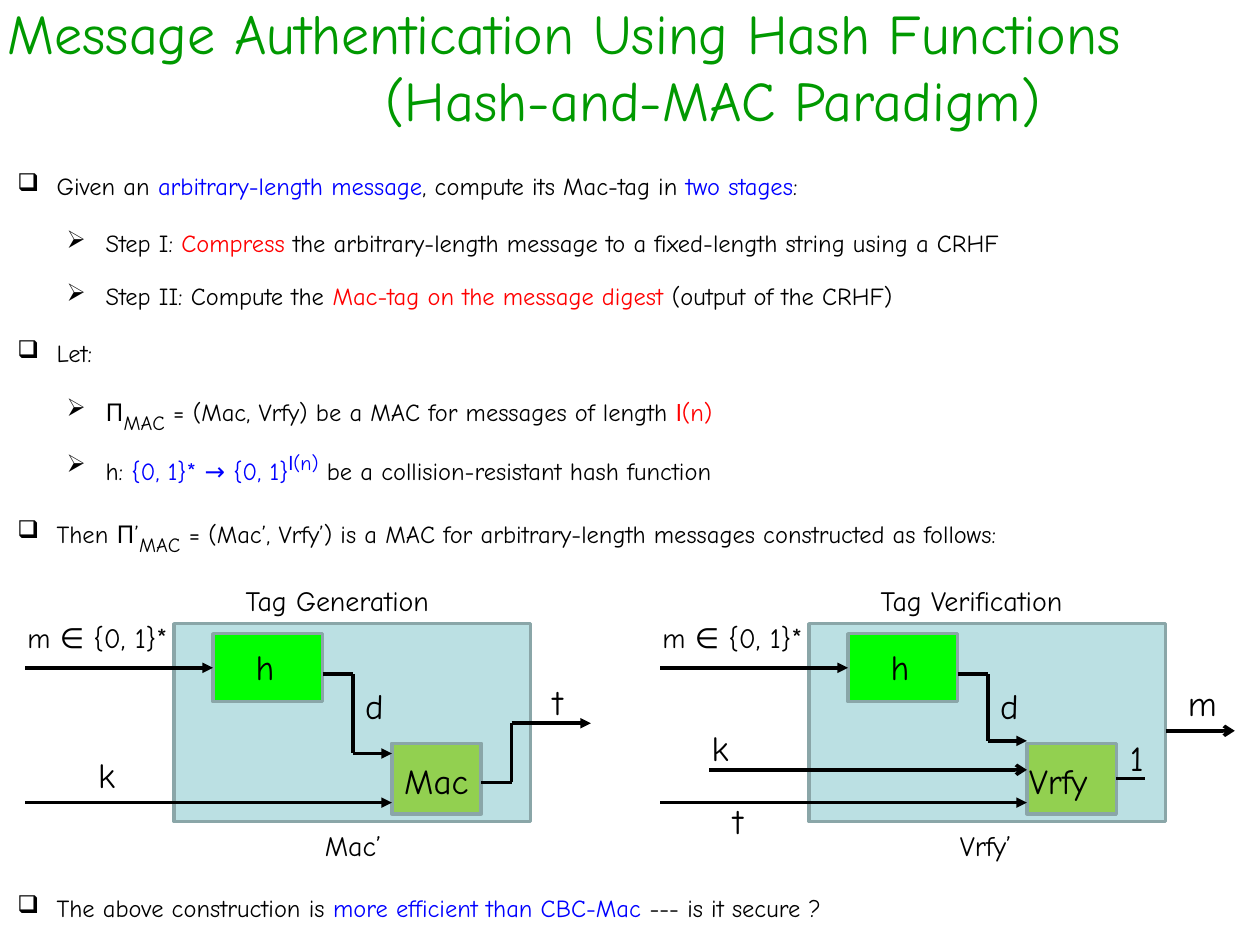
"""Build the slide on message authentication with the Hash-and-MAC paradigm."""
import pptx
import pptx.dml.color
import pptx.enum.shapes
import pptx.enum.text
import pptx.oxml
import pptx.oxml.ns
import pptx.util

Inches = pptx.util.Inches
COLORS = {
    "title": "009900", "text": "000000", "blue": "0000FF", "red": "FF0000",
    "panel": "BBE0E3", "border": "8AA6A8", "hash": "00FF00", "mac": "92D050",
}
BLUE = {"color": "blue"}
RED = {"color": "red"}
SUBSCRIPT = {"size": 20, "baseline": -25}
SUPERSCRIPT = {"size": 20, "baseline": 30, "color": "blue"}

deck = pptx.Presentation()
deck.slide_width, deck.slide_height = Inches(10), Inches(7.5)
page = deck.slides.add_slide(deck.slide_layouts[5])


def add_text(text, left=0, top=0, width=1, height=0.44, size=20, color="text",
             bullet=None, para=None):
    """Write a string or a list of (text, format) spans into a paragraph or a new box."""
    if para is None:
        box = page.shapes.add_textbox(Inches(left), Inches(top), Inches(width), Inches(height))
        box.text_frame.word_wrap = True
        para = box.text_frame.paragraphs[0]
    if bullet:
        properties = para._p.get_or_add_pPr()
        properties.set("marL", str(Inches(0.31)))
        properties.set("indent", str(-Inches(0.31)))
        mark = pptx.oxml.parse_xml(f'<a:buChar {pptx.oxml.ns.nsdecls("a")} char="{bullet}"/>')
        properties.append(mark)
    for words, style in [(text, {})] if isinstance(text, str) else text:
        span = para.add_run()
        span.text = words
        span.font.name = style.get("font", "Comic Neue")
        span.font.size = pptx.util.Pt(style.get("size", size))
        span.font.color.rgb = pptx.dml.color.RGBColor.from_string(COLORS[style.get("color", color)])
        if "baseline" in style:
            span.font._element.set("baseline", str(style["baseline"] * 1000))


def add_line(x1, y1, x2, y2, head=None):
    """Draw a straight black line, with an arrowhead at its end if one is named."""
    line = page.shapes.add_connector(
        pptx.enum.shapes.MSO_CONNECTOR.STRAIGHT, Inches(x1), Inches(y1), Inches(x2), Inches(y2))
    line.line.width = pptx.util.Pt(2)
    line.line.color.rgb = pptx.dml.color.RGBColor.from_string(COLORS["text"])
    namespace = pptx.oxml.ns.nsdecls("a")
    if head:
        line.line._get_or_add_ln().append(
            pptx.oxml.parse_xml(f'<a:tailEnd {namespace} type="{head}"/>'))
    line._element.spPr.append(pptx.oxml.parse_xml(f"<a:effectLst {namespace}/>"))
    return line


title = page.shapes.title
title.left, title.top, title.width, title.height = (
    Inches(-0.04), Inches(-0.03), Inches(10.08), Inches(1.1))
title.text_frame.word_wrap = True
title.text_frame.auto_size = pptx.enum.text.MSO_AUTO_SIZE.NONE
title.text_frame.vertical_anchor = pptx.enum.text.MSO_ANCHOR.MIDDLE
title_lines = [("Message Authentication Using Hash Functions", 0), ("(Hash-and-MAC Paradigm)", 3)]
for number, (words, margin) in enumerate(title_lines):
    para = title.text_frame.add_paragraph() if number else title.text_frame.paragraphs[0]
    para.alignment = pptx.enum.text.PP_ALIGN.LEFT
    para._p.get_or_add_pPr().set("marL", str(Inches(margin)))
    add_text(words, para=para, size=32, color="title")

statements = [
    (1.31, "❑", [("Given an ", {}), ("arbitrary-length message", BLUE),
                 (", compute its Mac-tag in ", {}), ("two stages", BLUE), (":", {})]),
    (1.76, "➢", [("Step I: ", {}), ("Compress", RED),
                 (" the arbitrary-length message to a fixed-length string using a CRHF", {})]),
    (2.18, "➢", [("Step II: Compute the ", {}), ("Mac-tag on the message digest ", RED),
                 ("(output of the CRHF)", {})]),
    (2.63, "❑", "Let:"),
    (3.02, "➢", [("Π", {}), ("MAC", SUBSCRIPT),
                 (" = (Mac, Vrfy) be a MAC for messages of length ", {}),
                 ("l", {"font": "Calibri", "color": "red"}), ("(n)", RED)]),
    (3.49, "➢", [("h: ", {}), ("{0, 1}* → {0, 1}", BLUE),
                 ("l", {**SUPERSCRIPT, "font": "Calibri"}), ("(n)", SUPERSCRIPT),
                 (" be a collision-resistant hash function", {})]),
    (3.99, "❑", [("Then Π’", {}), ("MAC", SUBSCRIPT),
                 (" = (Mac’, Vrfy’) is a MAC for arbitrary-length messages "
                  "constructed as follows:", {})]),
    (7.04, "❑", [("The above construction is ", {}), ("more efficient than CBC-Mac ", BLUE),
                 ("--- is it secure ?", {})]),
]
for top, bullet, spans in statements:
    left = 0.04 if bullet == "❑" else 0.43
    add_text(spans, left=left, top=top, width=9.69, height=0.34, size=14, bullet=bullet)

panels = [
    (0, "Tag Generation", "Mac’", "Mac", 3.11, 5.98, "k", 5.93),
    (5.04, "Tag Verification", "Vrfy’", "Vrfy", 3.03, 5.88, "t", 6.3),
]
for shift, heading, caption, block, block_left, digest_y, key, key_top in panels:
    blocks = {}
    for name, left, top, width, height in [
        ("panel", 1.38, 4.95, 2.83, 1.57),
        ("hash", 1.69, 5.03, 0.87, 0.54),
        ("mac", 3.11, 5.9, 0.71, 0.56),
    ]:
        shape = page.shapes.add_shape(
            pptx.enum.shapes.MSO_SHAPE.RECTANGLE,
            Inches(left + shift), Inches(top), Inches(width), Inches(height))
        shape.shadow.inherit = False
        shape.fill.solid()
        shape.fill.fore_color.rgb = pptx.dml.color.RGBColor.from_string(COLORS[name])
        shape.line.color.rgb = pptx.dml.color.RGBColor.from_string(COLORS["border"])
        shape.line.width = pptx.util.Pt(2)
        blocks[name] = shape

    message_arrow = add_line(0.2 + shift, 5.3, 1.69 + shift, 5.3, head="triangle")
    message_arrow.end_connect(blocks["hash"], 1)
    add_line(0.2 + shift, 6.37, 3.11 + shift, 6.37, head="triangle")
    add_line(2.56 + shift, 5.35, 2.8 + shift, 5.35)
    add_line(2.8 + shift, 5.35, 2.8 + shift, digest_y)
    add_line(2.8 + shift, digest_y, 3.11 + shift, digest_y, head="triangle")

    add_text(heading, left=1.85 + shift, top=4.58, width=2.28, height=0.37, size=16)
    add_text("m ∈ {0, 1}*", left=0.12 + shift, top=4.88, width=1.57, height=0.37, size=16)
    add_text(caption, left=2.48 + shift, top=6.53, width=0.79, height=0.37, size=16)
    add_text("h", left=1.93 + shift, top=5.07)
    add_text("d", left=2.8 + shift, top=5.38, width=0.46)
    add_text(block, left=block_left + shift, top=5.98)
    add_text(key, left=0.68 + shift, top=key_top, width=0.7)

add_line(3.82, 6.21, 4.06, 6.21)
add_line(4.06, 6.21, 4.06, 5.74)
add_line(4.06, 5.74, 4.69, 5.74, head="triangle")
add_text("t", left=4.29, top=5.35, width=0.46)

add_line(5.63, 6.11, 8.15, 6.11, head="arrow")
add_text("k", left=5.55, top=5.72, width=0.7)
result_line = add_line(8.86, 6.18, 9.09, 6.18)
result_line.begin_connect(blocks["mac"], 3)
add_text("1", left=8.87, top=5.8, width=0.46)
add_line(9.25, 5.8, 9.8, 5.8, head="arrow")
add_text("m", left=9.33, top=5.36, width=0.6)

deck.save("out.pptx")
